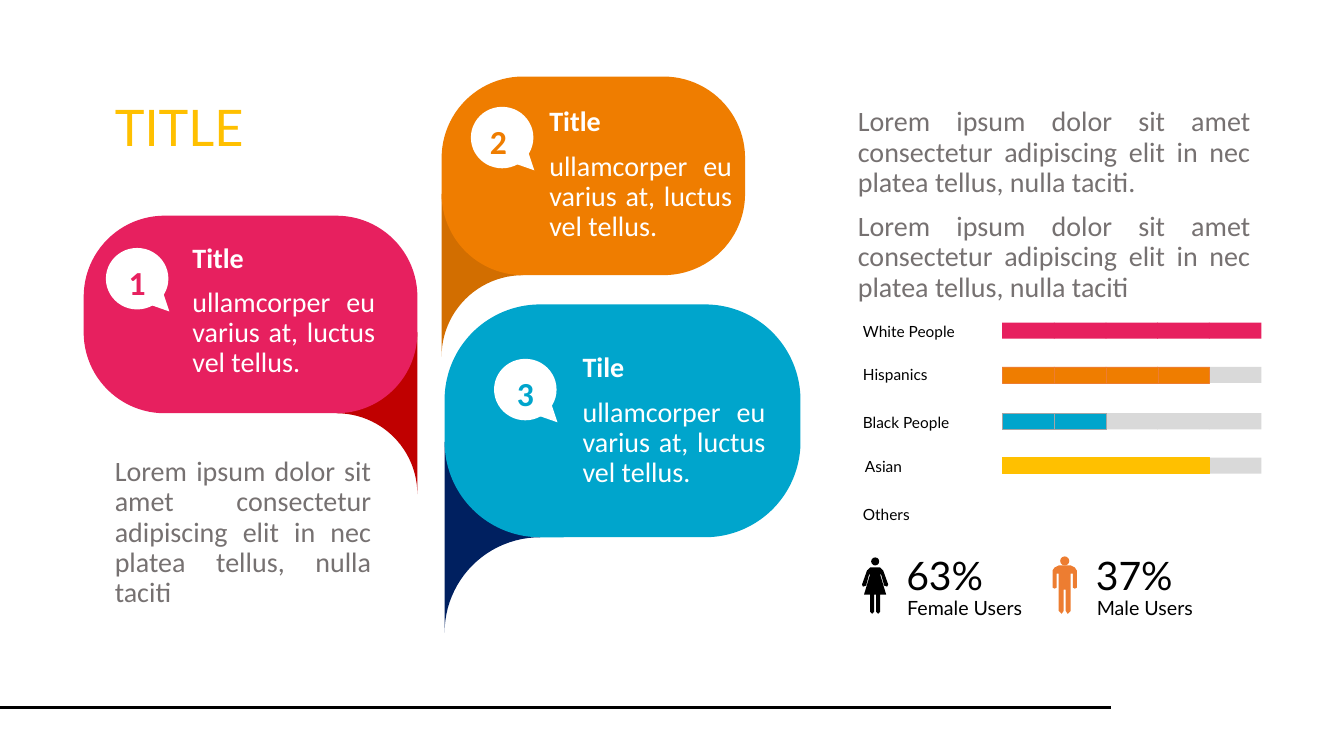
"""Build an infographic slide with three numbered bubbles, rating bars and a user split."""
from math import cos, pi, sin

from lxml import etree
from pptx import Presentation
from pptx.dml.color import RGBColor
from pptx.enum.shapes import MSO_CONNECTOR, MSO_SHAPE
from pptx.enum.text import MSO_ANCHOR, PP_ALIGN
from pptx.oxml.ns import qn
from pptx.util import Inches, Pt

RECT, ROUNDED, ELLIPSE = MSO_SHAPE.RECTANGLE, MSO_SHAPE.ROUNDED_RECTANGLE, MSO_SHAPE.OVAL
LEFT, CENTER, JUSTIFY = PP_ALIGN.LEFT, PP_ALIGN.CENTER, PP_ALIGN.JUSTIFY
TOP, MIDDLE = MSO_ANCHOR.TOP, MSO_ANCHOR.MIDDLE
STRAIGHT = MSO_CONNECTOR.STRAIGHT

PINK, ORANGE, BLUE, YELLOW = "E7205F", "EF7D00", "00A5CC", "FFC000"
WHITE, BLACK, TRACK, GREY = "FFFFFF", "000000", "D9D9D9", "767171"


def add_form(kind, box, color):
    if kind is None:
        points = [(Inches(x), Inches(y)) for x, y in box]
        builder = slide.shapes.build_freeform(*points[0], scale=1.0)
        builder.add_line_segments(points[1:], close=True)
        s = builder.convert_to_shape()
    else:
        s = slide.shapes.add_shape(kind, *map(Inches, box))
    s.shadow.inherit = False
    s.fill.solid()
    s.fill.fore_color.rgb = RGBColor.from_string(color)
    s.line.fill.background()
    return s


def set_text(s, texts, size, color, font="Calibri", align=LEFT, anchor=TOP,
             body=False, bold=False):
    tf = s.text_frame
    tf.word_wrap = True
    tf.vertical_anchor = anchor
    for i, text in enumerate(texts):
        p = tf.add_paragraph() if i else tf.paragraphs[0]
        p.text = text
        p.alignment = align
        p.font.name, p.font.size = font, Pt(size)
        p.font.bold = bold and i == 0
        p.font.color.rgb = RGBColor.from_string(color)
        if body:
            p.line_spacing, p.space_before = 0.9, Pt(10)


prs = Presentation()
prs.slide_width, prs.slide_height = Inches(13.33), Inches(7.5)
slide = prs.slides.add_slide(prs.slide_layouts[6])

bubbles = [
    ("2", "Title", (4.38, 0.76, 3.01, 1.97), ORANGE, "D26E00", 1, (4.67, 1.06), (5.35, 1.02), LEFT),
    ("3", "Tile", (4.41, 3.02, 3.53, 2.31), BLUE, "002060", 1, (4.9, 3.56), (5.68, 3.46), CENTER),
    ("1", "Title", (0.83, 2.14, 3.31, 1.96), PINK, "C00000", -1, (1.05, 2.46), (1.81, 2.37), CENTER),
]
for number, title, box, color, tail_color, side, badge, text_at, align in bubbles:
    left, top, width, height = box
    radius = 0.41 * height
    edge = left if side == 1 else left + width
    bottom = top + height
    angles = [pi / 2 * i / 24 for i in range(25)]
    arc = [(edge + side * radius * (1 - sin(a)), bottom + radius * (1 - cos(a))) for a in angles]
    add_form(None, arc + [(edge, bottom - radius)], tail_color)
    add_form(ROUNDED, box, color).adjustments[0] = 0.41

    x, y = badge
    s = add_form(ELLIPSE, (x, y, 0.62, 0.61), WHITE)
    set_text(s, [number], 24, color, align=align, bold=True)
    add_form(None, [(x + 0.63, y + 0.63), (x + 0.43, y + 0.56), (x + 0.56, y + 0.42)], WHITE)
    s = slide.shapes.add_textbox(*map(Inches, (*text_at, 2.01, 1.54)))
    set_text(s, [title, "ullamcorper eu varius at, luctus vel tellus."], 20, WHITE,
             align=JUSTIFY, body=True, bold=True)

lorem = "Lorem ipsum dolor sit amet consectetur adipiscing elit in nec platea tellus, nulla taciti"
for box, texts, size, color, font, align in [
    ((1.04, 0.97, 3.01, 0.73), ["TITLE"], 36, YELLOW, "Lato", LEFT),
    ((1.04, 4.49, 2.74, 1.8), [lorem], 20, GREY, "Calibri", JUSTIFY),
    ((8.41, 1.02, 4.09, 1.97), [lorem + ".", lorem], 20, GREY, "Calibri", JUSTIFY),
]:
    s = slide.shapes.add_textbox(*map(Inches, box))
    set_text(s, texts, size, color, font, align, body=True)

ratings = [
    ("White People", 8.46, 3.15, 3.2, 5, PINK, None),
    ("Hispanics", 8.46, 3.57, 3.64, 4, ORANGE, "ED7D31"),
    ("Black People", 8.46, 4.05, 4.1, 2, BLUE, "A5A5A5"),
    ("Asian", 8.48, 4.49, 4.54, 4, YELLOW, YELLOW),
    ("Others", 8.46, 4.96, None, 0, None, None),
]
for label, x, y, bar_top, score, color, outline in ratings:
    s = slide.shapes.add_textbox(*map(Inches, (x, y, 1.54, 0.29)))
    set_text(s, [label], 11, BLACK, "Lato")
    if bar_top is None:
        continue
    for i in reversed(range(5)):
        filled = i < score
        s = add_form(RECT, (9.94 + 2.05 * i / 4, bar_top, 0.52, 0.16), color if filled else TRACK)
        if filled and outline:
            s.line.color.rgb = RGBColor.from_string(outline)
            s.line.width = Pt(0.5)

woman = [(0, 5.63), (0.05, 5.63), (0.08, 5.66), (0.13, 5.8), (0.12, 5.82), (0.09, 5.81),
         (0.06, 5.7), (0.05, 5.7), (0.11, 5.9), (0.05, 5.9), (0.05, 6.07), (0.03, 6.09),
         (0.01, 6.07), (0.01, 5.9), (0, 5.9)]
man = [(0, 5.61), (0.06, 5.61), (0.1, 5.63), (0.12, 5.66), (0.12, 5.83), (0.1, 5.84),
       (0.08, 5.83), (0.08, 5.69), (0.06, 5.69), (0.06, 6.06), (0.03, 6.09), (0.01, 6.06),
       (0.01, 5.85), (0, 5.85)]
users = [
    ("63%", "Female Users", woman, 8.68, 5.53, 0.08, BLACK, 8.89),
    ("37%", "Male Users", man, 10.56, 5.52, 0.09, "ED7D31", 10.77),
]
for share, label, half, middle, head_top, head, color, x in users:
    outline = [(middle + dx, y) for dx, y in half]
    outline += [(middle - dx, y) for dx, y in half[-2:0:-1]]
    add_form(None, outline, color)
    add_form(ELLIPSE, (middle - head / 2, head_top, head, head), color)
    s = slide.shapes.add_textbox(*map(Inches, (x, 5.42, 1.51, 0.68)))
    set_text(s, [share], 28, BLACK, "Lato")
    s = slide.shapes.add_textbox(*map(Inches, (x + 0.01, 5.76, 1.5, 0.54)))
    set_text(s, [label], 14, BLACK, "Lato", anchor=MIDDLE)

s = slide.shapes.add_connector(STRAIGHT, *map(Inches, (0, 7.02, 11.02, 7.02)))
s.line.color.rgb = RGBColor.from_string(BLACK)
s.line.width = Pt(2.25)
etree.SubElement(s._element.spPr, qn("a:effectLst"))

prs.save("out.pptx")
